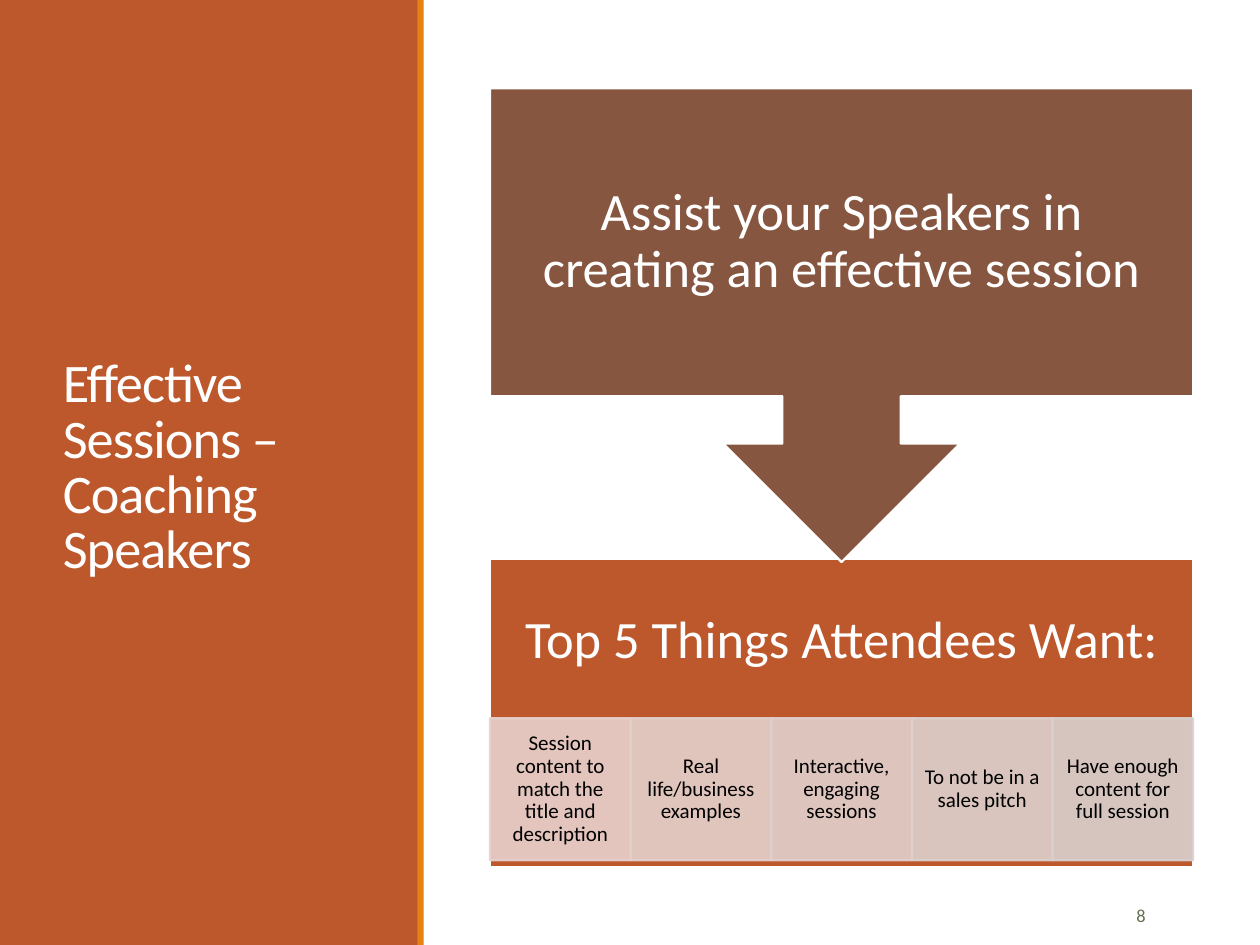
from lxml.etree import SubElement
from pptx import Presentation
from pptx.dml.color import RGBColor
from pptx.enum.shapes import MSO_SHAPE as SHAPE
from pptx.enum.text import MSO_ANCHOR as ANCHOR, PP_ALIGN as ALIGN
from pptx.oxml.ns import qn
from pptx.util import Pt

RUST = RGBColor(0xBD, 0x58, 0x2C)
ORANGE = RGBColor(0xE4, 0x83, 0x12)
BROWN = RGBColor(0x86, 0x56, 0x40)
GREEN = RGBColor(0x63, 0x70, 0x52)
WHITE = RGBColor(0xFF, 0xFF, 0xFF)
BLACK = RGBColor(0, 0, 0)

TITLE = "Effective Sessions – Coaching Speakers"
ADVICE = "Assist your Speakers in creating an effective session"
WANTS_HEADING = "Top 5 Things Attendees Want:"
WANTS = [
    ("Session content to match the title and description", RGBColor(0xE8, 0xD1, 0xCD)),
    ("Real life/business examples", RGBColor(0xE4, 0xD1, 0xCD)),
    ("Interactive, engaging sessions", RGBColor(0xE1, 0xD1, 0xCE)),
    ("To not be in a sales pitch", RGBColor(0xDD, 0xD1, 0xCE)),
    ("Have enough content for full session", RGBColor(0xD9, 0xD1, 0xCF)),
]
PAGE = "8"

LEFT, WIDTH = 280, 401.8
CALLOUT_TOP, CALLOUT_H = 50.4, 270.8
PANEL_TOP, PANEL_H = 319.2, 176.3
CELL_TOP, CELL_H = 410.4, 81.2
CELL_W = WIDTH / len(WANTS)


def add_box(slide, box, fill, line=None, kind=SHAPE.RECTANGLE):
    sp = slide.shapes.add_shape(kind, *map(Pt, box))
    sp.shadow.inherit = False
    sp.fill.solid()
    sp.fill.fore_color.rgb = fill
    if line is None:
        sp.line.fill.background()
    else:
        sp.line.color.rgb = line
        sp.line.width = Pt(1.25)
    return sp


def set_text(sp, text, size, color, insets, align=ALIGN.CENTER, spacing=0.9):
    """Write one paragraph; insets are left, top, right, bottom."""
    tf = sp.text_frame
    tf.word_wrap = True
    tf.vertical_anchor = ANCHOR.MIDDLE
    tf.margin_left, tf.margin_top, tf.margin_right, tf.margin_bottom = map(Pt, insets)
    p = tf.paragraphs[0]
    p.text = text
    p.alignment = align
    p.line_spacing = spacing
    font = p.runs[0].font
    font.name, font.size, font.color.rgb = "Calibri", Pt(size), color
    return font


def set_opacity(sp, percent):
    """Apply the opacity to both fill and line."""
    for color in sp._element.spPr.iter(qn("a:srgbClr")):
        SubElement(color, qn("a:alpha"), val=str(percent * 1000))


prs = Presentation()
prs.slide_width, prs.slide_height = Pt(720), Pt(540)
s = prs.slides.add_slide(prs.slide_layouts[6])

# Sidebar with title
add_box(s, (0, 0, 239, 540), RUST)
add_box(s, (238.5, 0, 3.6, 540), ORANGE)
title = s.shapes.add_textbox(*map(Pt, (28.8, 41, 182.2, 454.3)))
font = set_text(title, TITLE, 31, WHITE, (7.2, 3.6, 7.2, 3.6), ALIGN.LEFT, 0.85)
font._element.set("spc", "-50")

page = s.shapes.add_textbox(*map(Pt, (597.6, 508.3, 64.1, 28.8)))
set_text(page, PAGE, 10.5, GREEN, (7.2, 3.6, 7.2, 3.6), ALIGN.RIGHT, 1)

# Panel: the heading sits above the row of cells
panel = add_box(s, (LEFT, PANEL_TOP, WIDTH, PANEL_H), RUST, WHITE)
set_text(panel, WANTS_HEADING, 30, WHITE, (16.6, 16.6, 16.6, 97.8))

for i, (want, tint) in enumerate(WANTS):
    cell = add_box(s, (LEFT + i * CELL_W, CELL_TOP, CELL_W, CELL_H), tint, tint)
    set_opacity(cell, 90)
    set_text(cell, want, 12, BLACK, (6.5, 1.4, 6.5, 1.4))

callout = add_box(s, (LEFT, CALLOUT_TOP, WIDTH, CALLOUT_H), BROWN, WHITE,
                  SHAPE.DOWN_ARROW_CALLOUT)
set_text(callout, ADVICE, 30, WHITE, (16.6,) * 4)

prs.save("out.pptx")
